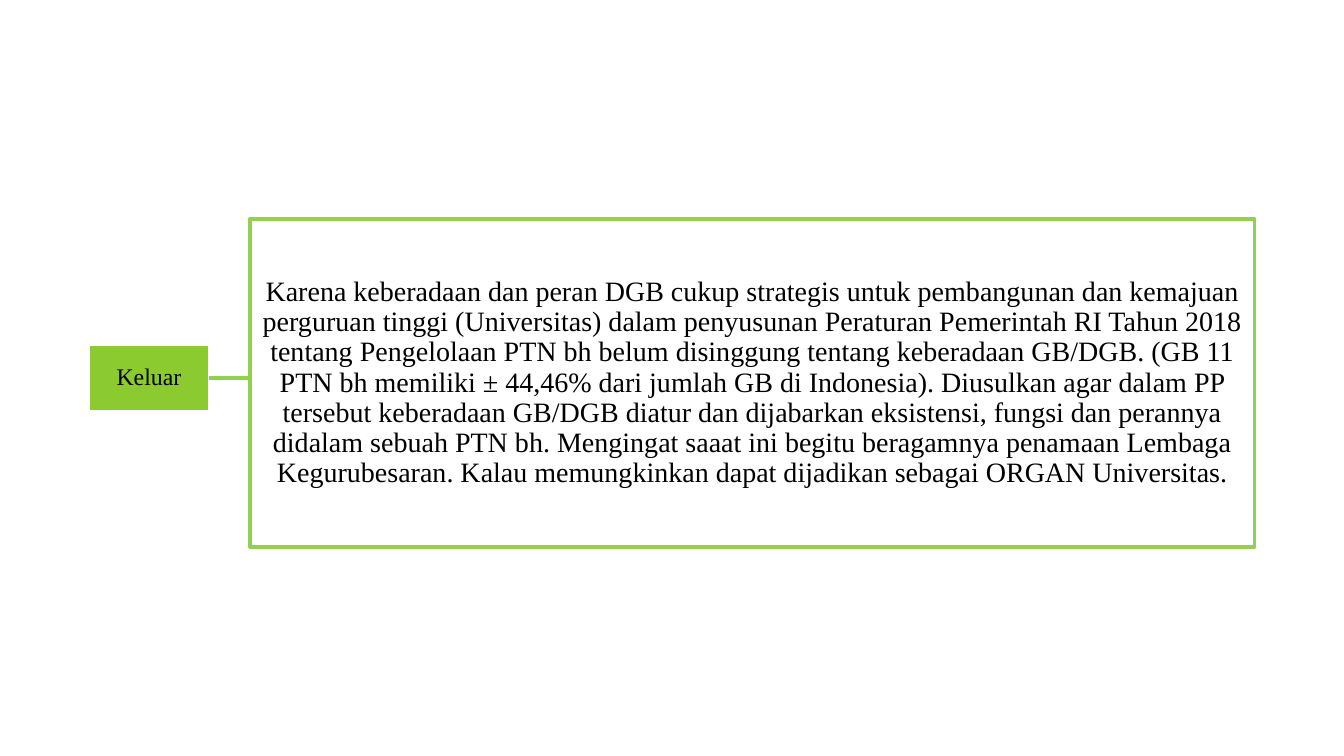
from pptx import Presentation
from pptx.dml.color import RGBColor
from pptx.enum.shapes import MSO_CONNECTOR, MSO_SHAPE
from pptx.enum.text import MSO_ANCHOR, PP_ALIGN
from pptx.oxml.ns import qn
from pptx.util import Pt
from lxml import etree

RECT = MSO_SHAPE.RECTANGLE
STRAIGHT = MSO_CONNECTOR.STRAIGHT
MIDDLE = MSO_ANCHOR.MIDDLE
CENTER = PP_ALIGN.CENTER
WIDTH, HEIGHT = 1344, 756
RIGHT_SIDE = 3
BLANK = 6

REASON = (
    "Karena keberadaan dan peran DGB cukup strategis untuk pembangunan dan "
    "kemajuan perguruan tinggi (Universitas) dalam penyusunan Peraturan "
    "Pemerintah RI Tahun 2018 tentang Pengelolaan PTN bh belum disinggung "
    "tentang keberadaan GB/DGB. (GB 11 PTN bh memiliki ± 44,46% dari jumlah "
    "GB di Indonesia). Diusulkan agar dalam PP tersebut keberadaan GB/DGB "
    "diatur dan dijabarkan eksistensi, fungsi dan perannya didalam sebuah "
    "PTN bh. Mengingat saaat ini begitu beragamnya penamaan Lembaga "
    "Kegurubesaran. Kalau memungkinkan dapat dijadikan sebagai ORGAN "
    "Universitas."
)


def px(count):
    return round(count * 9525 / 1.05)


def color(code):
    return RGBColor.from_string(code)


class Board:
    font = "Times New Roman"
    ink = "000000"
    paper = "FFFFFF"
    leaf = "8BCB30"
    edge = "92D050"
    stroke = 2.25

    def __init__(self, slide):
        self.slide = slide

    def box(self, area, text, size, fill, line, width):
        shape = self.slide.shapes.add_shape(RECT, *map(px, area))
        shape.shadow.inherit = False
        shape.fill.solid()
        shape.fill.fore_color.rgb = color(fill)
        shape.line.color.rgb = color(line)
        shape.line.width = Pt(width)
        frame = shape.text_frame
        frame.word_wrap = True
        frame.vertical_anchor = MIDDLE
        frame.margin_left = frame.margin_right = px(1)
        frame.margin_top = frame.margin_bottom = px(1)
        para = frame.paragraphs[0]
        para.text = text
        para.alignment = CENTER
        para.line_spacing = 0.9
        para.font.name = self.font
        para.font.size = Pt(size)
        para.font.color.rgb = color(self.ink)
        return shape

    def link(self, start, end_x):
        """Draw a level line from the right side of start to end_x."""
        y = start.top + start.height // 2
        line = self.slide.shapes.add_connector(STRAIGHT, 0, y, px(end_x), y)
        line.begin_connect(start, RIGHT_SIDE)
        line.line.color.rgb = color(self.edge)
        line.line.width = Pt(self.stroke)
        etree.SubElement(line._element.spPr, qn("a:effectLst"))


def main():
    deck = Presentation()
    deck.slide_width, deck.slide_height = px(WIDTH), px(HEIGHT)
    slide = deck.slides.add_slide(deck.slide_layouts[BLANK])
    board = Board(slide)
    label = board.box((89, 345, 120, 66), "Keluar", 17,
                      board.leaf, board.paper, 1.5)
    board.box((250, 219, 1005, 328), REASON, 20,
              board.paper, board.edge, board.stroke)
    board.link(label, 250)
    deck.save("out.pptx")


if __name__ == "__main__":
    main()
